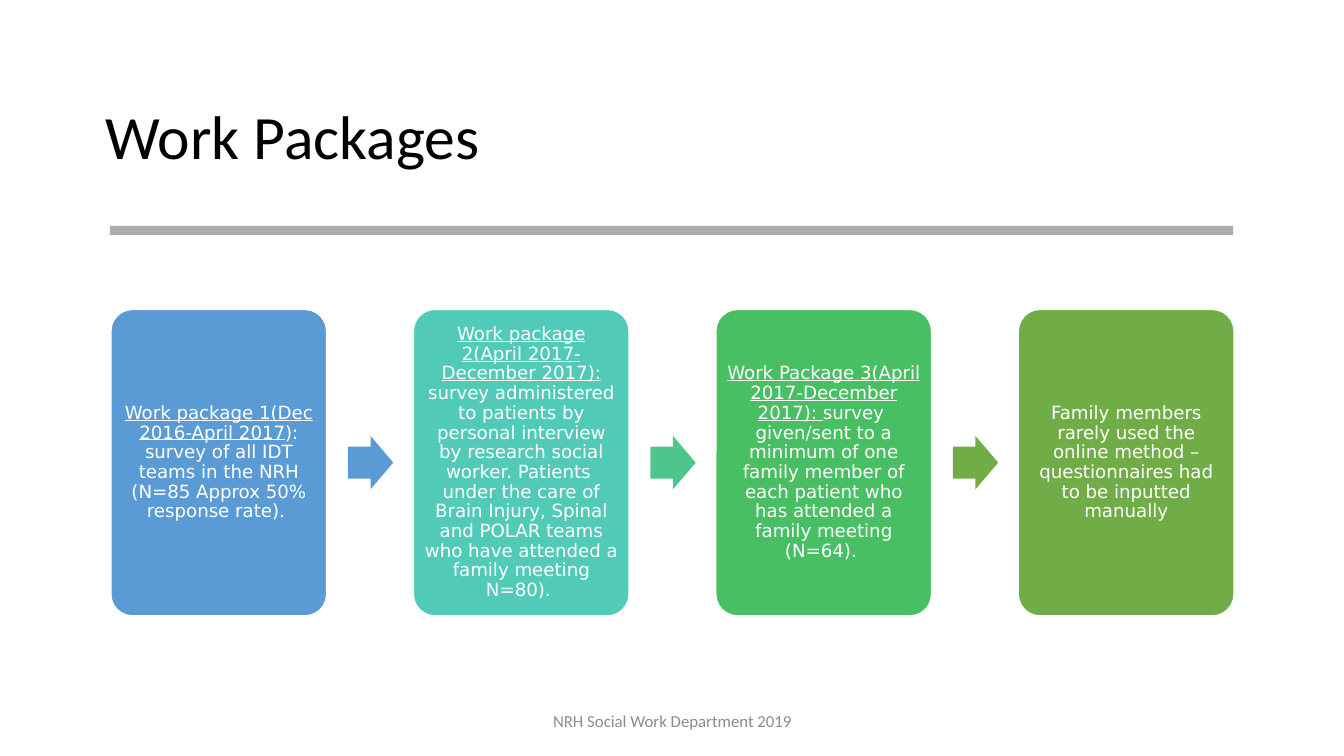
import pptx
import pptx.util
import pptx.dml.color
import pptx.enum.shapes
import pptx.enum.text
import pptx.oxml
import pptx.oxml.ns
from dataclasses import dataclass

Inches = pptx.util.Inches
Shapes = pptx.enum.shapes.MSO_SHAPE
Align = pptx.enum.text.PP_ALIGN

# Content: underlined lead, body, card colour
TITLE = "Work Packages"
FOOTER = "NRH Social Work Department 2019"
PACKAGES = [
    ("Work package 1(Dec 2016-April 2017",
     "): survey of all IDT teams in the NRH (N=85 Approx 50% response rate).\u00a0",
     "5B9BD5"),
    ("Work package 2(April 2017-December 2017): ",
     "survey administered to patients by personal interview by research social "
     "worker. Patients  under the care of Brain Injury, Spinal and POLAR teams "
     "who have attended a family meeting N=80).\u00a0",
     "52CAB8"),
    ("Work Package 3(April 2017-December 2017): ",
     "survey  given/sent to a minimum of one family member of each patient who "
     "has attended a family meeting (N=64). ",
     "49BF64"),
    ("",
     "Family members rarely used the online method – questionnaires had to be "
     "inputted manually",
     "70AD47"),
]
ARROW_COLOURS = ["5B9BD5", "4DC58D", "70AD47"]


@dataclass
class Theme:
    heading_font: str = "Calibri"
    card_font: str = "DejaVu Sans"
    title_size: int = 44
    card_size: int = 13
    footer_size: int = 12
    title_colour: str = "000000"
    card_text: str = "FFFFFF"
    card_border: str = "FFFFFF"
    rule_colour: str = "808080"
    rule_opacity: int = 65
    footer_colour: str = "8C8C8C"


theme = Theme()

# Layout, in inches
CARD_LEFT, CARD_TOP, CARD_WIDTH, CARD_HEIGHT = 1.1, 3.07, 2.14, 3.04
CARD_PITCH = 3.0
ARROW_OFFSET, ARROW_WIDTH, ARROW_HEIGHT = 2.35, 0.45, 0.53
CARD_INSET = 0.05


def rgb(colour):
    return pptx.dml.color.RGBColor.from_string(colour)


def set_font(para, name, size, colour):
    para.font.name = name
    para.font.size = pptx.util.Pt(size)
    para.font.color.rgb = rgb(colour)


def add_shape(page, kind, place, colour, adjustments=()):
    shape = page.shapes.add_shape(kind, *map(Inches, place))
    shape.shadow.inherit = False
    shape.fill.solid()
    shape.fill.fore_color.rgb = rgb(colour)
    shape.line.fill.background()
    for index, value in enumerate(adjustments):
        shape.adjustments[index] = value
    return shape


def add_label(page, place, text, size, colour, align):
    frame = page.shapes.add_textbox(*map(Inches, place)).text_frame
    frame.word_wrap = True
    frame.vertical_anchor = pptx.enum.text.MSO_ANCHOR.MIDDLE
    para = frame.paragraphs[0]
    para.text = text
    para.alignment = align
    set_font(para, theme.heading_font, size, colour)
    return para


def add_card(page, left, lead, body, colour):
    card = add_shape(page, Shapes.ROUNDED_RECTANGLE,
                     (left, CARD_TOP, CARD_WIDTH, CARD_HEIGHT), colour, [0.1])
    card.line.color.rgb = rgb(theme.card_border)
    card.line.width = pptx.util.Pt(1)
    frame = card.text_frame
    frame.word_wrap = True
    frame.vertical_anchor = pptx.enum.text.MSO_ANCHOR.MIDDLE
    frame.margin_left = frame.margin_right = Inches(CARD_INSET)
    frame.margin_top = frame.margin_bottom = Inches(CARD_INSET)
    para = frame.paragraphs[0]
    para.alignment = Align.CENTER
    para.line_spacing = 0.9
    set_font(para, theme.card_font, theme.card_size, theme.card_text)
    if lead:
        span = para.add_run()
        span.text = lead
        span.font.underline = True
    para.add_run().text = body


def main():
    deck = pptx.Presentation()
    deck.slide_width, deck.slide_height = Inches(13.33), Inches(7.5)
    page = deck.slides.add_slide(deck.slide_layouts[6])

    # Title and the translucent rule below it
    title = add_label(page, (0.95, 0.66, 11.43, 1.45), TITLE,
                      theme.title_size, theme.title_colour, Align.LEFT)
    title.line_spacing = 0.9
    rule = add_shape(page, Shapes.RECTANGLE, (1.09, 2.24, 11.14, 0.09),
                     theme.rule_colour)
    colour_node = rule.fill._xPr.find(".//" + pptx.oxml.ns.qn("a:srgbClr"))
    alpha = pptx.oxml.parse_xml(
        f'<a:alpha {pptx.oxml.ns.nsdecls("a")} val="{theme.rule_opacity * 1000}"/>')
    colour_node.append(alpha)

    # Cards in a row
    for index, package in enumerate(PACKAGES):
        add_card(page, CARD_LEFT + index * CARD_PITCH, *package)

    # Arrows between the cards, centred on their height
    arrow_top = CARD_TOP + (CARD_HEIGHT - ARROW_HEIGHT) / 2
    for index, colour in enumerate(ARROW_COLOURS):
        left = CARD_LEFT + index * CARD_PITCH + ARROW_OFFSET
        add_shape(page, Shapes.RIGHT_ARROW,
                  (left, arrow_top, ARROW_WIDTH, ARROW_HEIGHT), colour, [0.6, 0.5])

    # Footer
    add_label(page, (4.42, 6.95, 4.5, 0.4), FOOTER,
              theme.footer_size, theme.footer_colour, Align.CENTER)

    deck.save("out.pptx")


if __name__ == "__main__":
    main()
